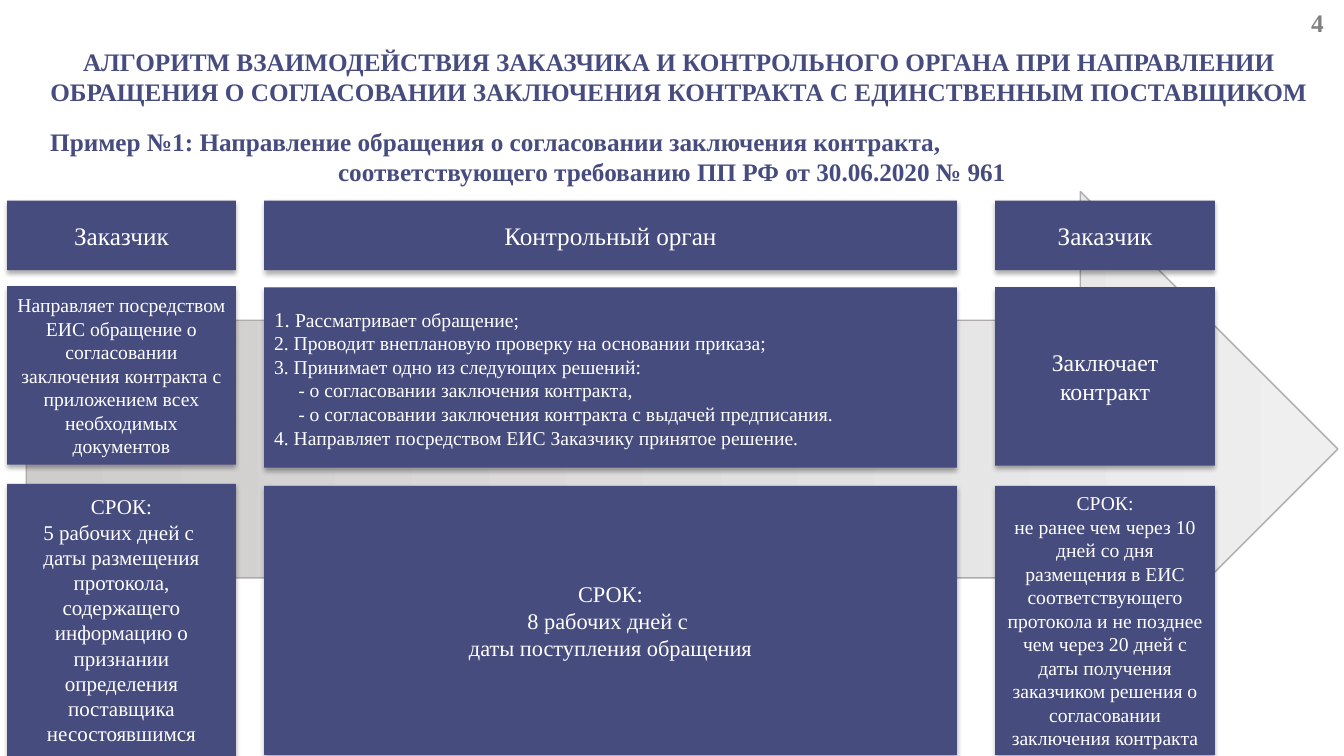
from lxml import etree
from pptx import Presentation
from pptx.dml.color import RGBColor
from pptx.enum.shapes import MSO_SHAPE
from pptx.enum.text import MSO_ANCHOR, PP_ALIGN
from pptx.util import Inches, Pt

NAVY = RGBColor(0x47, 0x4C, 0x7F)
WHITE = RGBColor(0xFF, 0xFF, 0xFF)
GRAY = RGBColor(0x80, 0x80, 0x80)
EDGE = RGBColor(0xAF, 0xAB, 0xAB)
DARK = RGBColor(0xCF, 0xCC, 0xCC)
LIGHT = RGBColor(0xEF, 0xEF, 0xEF)
LEFT, CENTER, JUST = PP_ALIGN.LEFT, PP_ALIGN.CENTER, PP_ALIGN.JUSTIFY
MIDDLE = MSO_ANCHOR.MIDDLE
RECT, ARROW = MSO_SHAPE.RECTANGLE, MSO_SHAPE.RIGHT_ARROW
FONT = "Times New Roman"
SHADOW = """<a:effectLst xmlns:a="http://schemas.openxmlformats.org/drawingml/2006/main">
<a:outerShdw blurRad="44450" dist="27940" dir="5400000" algn="ctr" rotWithShape="0">
<a:srgbClr val="000000"><a:alpha val="32000"/></a:srgbClr></a:outerShdw></a:effectLst>"""


def write(shape, paras, color, bold=False):
    """Fill a shape with paragraphs given as (align, indent, [(text, size), ...])."""
    frame = shape.text_frame
    frame.word_wrap = True
    frame.vertical_anchor = MIDDLE
    for i, (align, indent, runs) in enumerate(paras):
        para = frame.add_paragraph() if i else frame.paragraphs[0]
        para.alignment = align
        if indent:
            para._p.get_or_add_pPr().set("marL", str(Inches(indent)))
        for text, size in runs:
            run = para.add_run()
            run.text = text
            run.font.name = FONT
            run.font.size = Pt(size)
            run.font.bold = bold
            run.font.color.rgb = color


def center(size, *lines):
    """Centred paragraphs of one size."""
    return [(CENTER, 0, [(line, size)]) for line in lines]


prs = Presentation()
prs.slide_width, prs.slide_height = Inches(13.33), Inches(7.5)
slide = prs.slides.add_slide(prs.slide_layouts[6])
shapes = slide.shapes

# Headings and page number
sample = [
    (LEFT, 0.4, [("Пример №1: Направление обращения о согласовании заключения контракта,", 18)]),
    (CENTER, 0, [("соответствующего требованию ПП РФ от 30.06.2020 № 961", 18)]),
]
title = center(18, "АЛГОРИТМ ВЗАИМОДЕЙСТВИЯ ЗАКАЗЧИКА И КОНТРОЛЬНОГО ОРГАНА ПРИ НАПРАВЛЕНИИ "
               "ОБРАЩЕНИЯ О СОГЛАСОВАНИИ ЗАКЛЮЧЕНИЯ КОНТРАКТА С ЕДИНСТВЕННЫМ ПОСТАВЩИКОМ")
for left, top, width, paras, color in [
    (0, 1.28, 13.33, sample, NAVY),
    (0.07, 0.49, 13.33, title, NAVY),
    (12.27, -0.05, 1.59, center(18, "4"), GRAY),
]:
    box = shapes.add_textbox(Inches(left), Inches(top), Inches(width), Inches(0.54))
    write(box, paras, color, bold=True)

# Arrow behind the cards
arrow = shapes.add_shape(ARROW, Inches(0.26), Inches(1.9), Inches(13.01), Inches(5.11))
arrow.shadow.inherit = False
arrow.fill.gradient()
arrow.fill.gradient_angle = 0
for stop, color in zip(arrow.fill.gradient_stops, (DARK, LIGHT)):
    stop.color.rgb = color
arrow.line.color.rgb = EDGE
arrow.line.width = Pt(1)

# Cards: each column holds a role, an action and a term
steps = [
    (JUST, 0, [("1. ", 15), ("Рассматривает обращение;", 14)]),
    (JUST, 0, [("2. Проводит внеплановую проверку на основании приказа;", 14)]),
    (JUST, 0, [("3. Принимает одно из следующих решений:", 14)]),
    (JUST, 0.24, [("- о согласовании заключения контракта,", 14)]),
    (JUST, 0.24, [("- о согласовании заключения контракта с выдачей предписания.", 14)]),
    (JUST, 0, [("4. Направляет посредством ЕИС Заказчику принятое решение.", 14)]),
]
columns = [
    (0.07, 2.27, [
        (1.99, 0.69, center(18, "Заказчик")),
        (2.84, 1.77, center(14, "Направляет посредством ЕИС обращение о согласовании заключения "
                            "контракта с приложением всех необходимых документов")),
        (4.8, 2.7, center(15, "СРОК:", "5 рабочих дней с ",
                          "даты размещения протокола, содержащего информацию о признании "
                          "определения поставщика несостоявшимся")),
    ]),
    (2.62, 6.87, [
        (1.99, 0.69, center(18, "Контрольный орган")),
        (2.85, 1.79, steps),
        (4.82, 2.67, center(16, "СРОК:", "8 рабочих дней с ", "даты поступления обращения")),
    ]),
    (9.87, 2.18, [
        (1.99, 0.69, center(18, "Заказчик")),
        (2.85, 1.77, center(17, "Заключает контракт")),
        (4.82, 2.67, center(14, "СРОК:",
                            "не ранее чем через 10 дней со дня размещения в ЕИС соответствующего "
                            "протокола и не позднее чем через 20 дней с даты получения заказчиком "
                            "решения о согласовании заключения контракта")),
    ]),
]
for left, width, cards in columns:
    for top, height, paras in cards:
        card = shapes.add_shape(RECT, Inches(left), Inches(top), Inches(width), Inches(height))
        card.fill.solid()
        card.fill.fore_color.rgb = NAVY
        card.line.fill.background()
        card._element.spPr.append(etree.fromstring(SHADOW))
        write(card, paras, WHITE)

prs.save("out.pptx")
